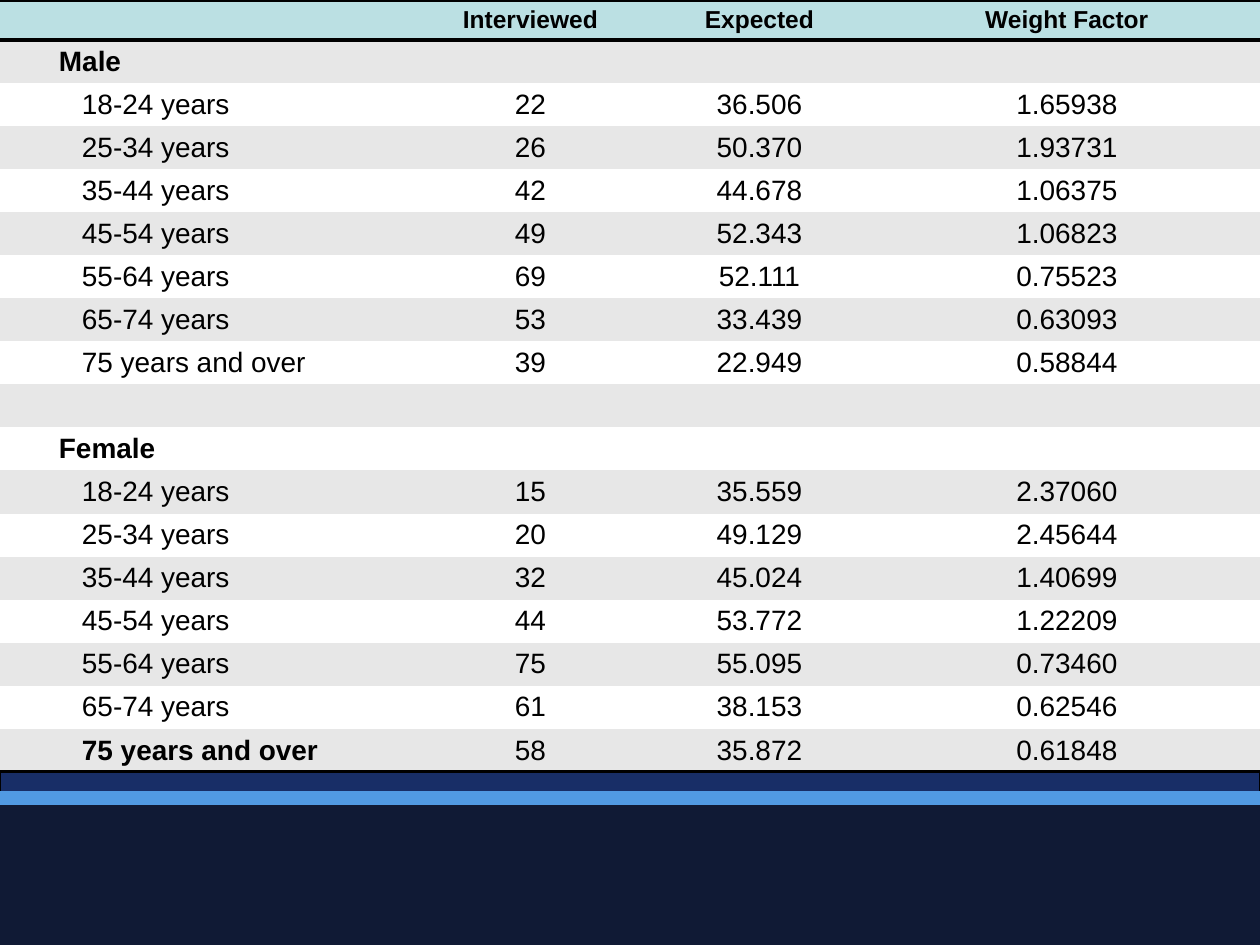
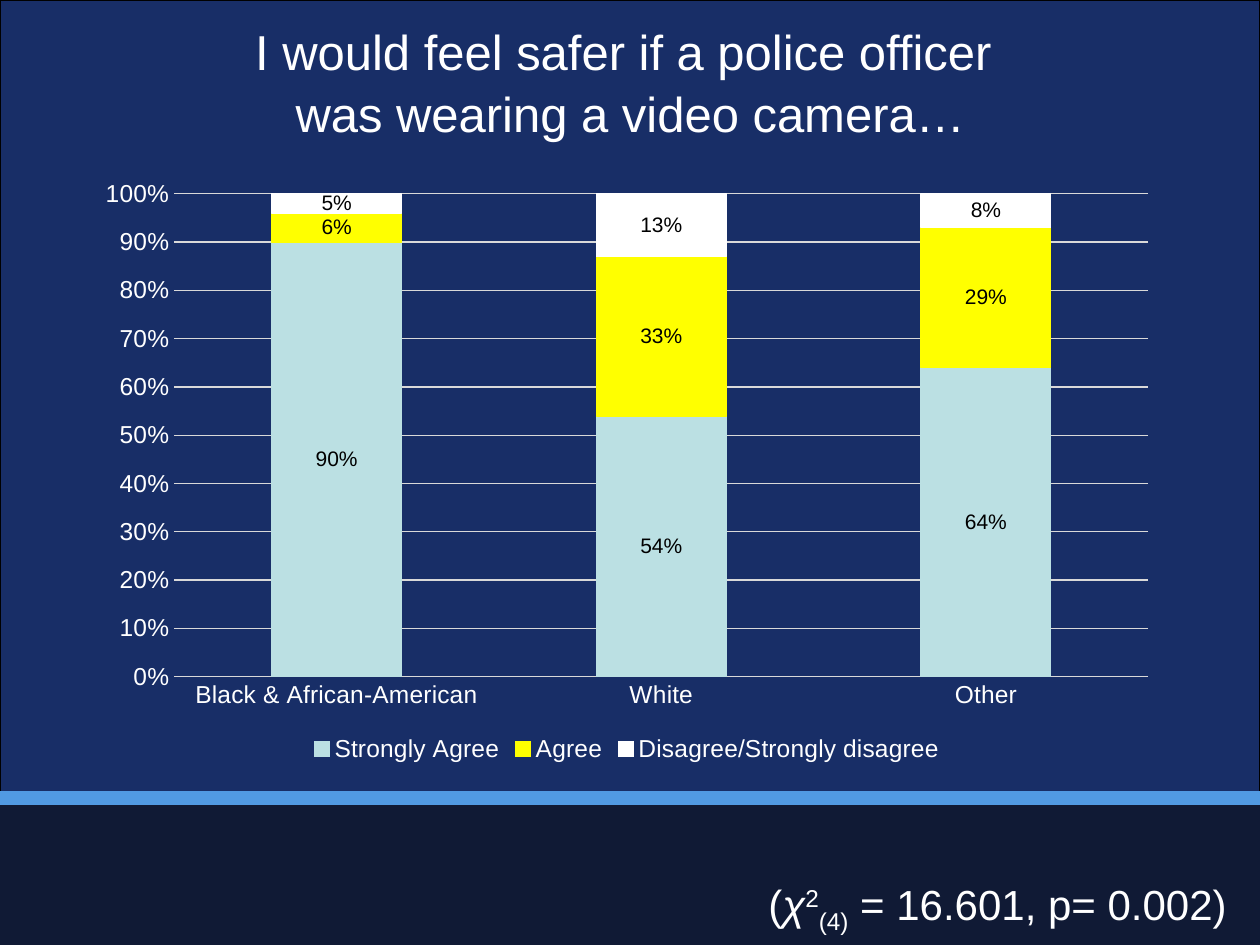
from lxml.etree import SubElement
from pptx import Presentation
from pptx.chart.data import CategoryChartData
from pptx.dml.color import RGBColor
from pptx.enum.chart import XL_CHART_TYPE, XL_LEGEND_POSITION, XL_TICK_MARK
from pptx.enum.shapes import MSO_CONNECTOR, MSO_SHAPE
from pptx.enum.text import MSO_ANCHOR, MSO_AUTO_SIZE, PP_ALIGN
from pptx.oxml.ns import qn
from pptx.util import Pt

EMU_PER_PX = 914400 // 126
WIDTH, HEIGHT = 1260, 945
BAND_TOP = 798
FONT = "Arial"
COLORS = {
    "navy": "182E67", "midnight": "101A35", "sky": "519AE3",
    "pale": "BBE0E3", "yellow": "FFFF00", "white": "FFFFFF",
    "black": "000000", "stripe": "E7E7E7", "grid": "D9D9D9",
}
TITLE_ONLY, BLANK = 5, 6
NO_TABLE_STYLE = "{2D5ABB26-0587-4C30-8999-92F81FD0307C}"

AGES = ["18-24 years", "25-34 years", "35-44 years", "45-54 years",
        "55-64 years", "65-74 years", "75 years and over"]
MALE = [
    ("22", "36.506", "1.65938"), ("26", "50.370", "1.93731"),
    ("42", "44.678", "1.06375"), ("49", "52.343", "1.06823"),
    ("69", "52.111", "0.75523"), ("53", "33.439", "0.63093"),
    ("39", "22.949", "0.58844"),
]
FEMALE = [
    ("15", "35.559", "2.37060"), ("20", "49.129", "2.45644"),
    ("32", "45.024", "1.40699"), ("44", "53.772", "1.22209"),
    ("75", "55.095", "0.73460"), ("61", "38.153", "0.62546"),
    ("58", "35.872", "0.61848"),
]
RACES = ["Black & African-American", "White", "Other"]
ANSWERS = [
    ("Strongly Agree", (0.9, 0.54, 0.64), "pale"),
    ("Agree", (0.06, 0.33, 0.29), "yellow"),
    ("Disagree/Strongly disagree", (0.05, 0.13, 0.08), "white"),
]


def px(length):
    return length * EMU_PER_PX


def color(name):
    return RGBColor.from_string(COLORS[name])


class Deck:
    """Holds the shared style and the slide being built."""

    def __init__(self):
        self.presentation = Presentation()
        self.presentation.slide_width = px(WIDTH)
        self.presentation.slide_height = px(HEIGHT)
        self.slide = None

    def new_slide(self, layout):
        layouts = self.presentation.slide_layouts
        self.slide = self.presentation.slides.add_slide(layouts[layout])

    def style_font(self, font, size, name="white", bold=False):
        font.name = FONT
        font.size = Pt(size)
        font.bold = bold
        font.color.rgb = color(name)

    def rectangle(self, left, top, width, height, fill, line=None):
        shape = self.slide.shapes.add_shape(
            MSO_SHAPE.RECTANGLE, px(left), px(top), px(width), px(height))
        shape.shadow.inherit = False
        shape.fill.solid()
        shape.fill.fore_color.rgb = color(fill)
        if line:
            shape.line.color.rgb = color(line)
            shape.line.width = Pt(0.75)
        else:
            shape.line.fill.background()
        return shape

    def horizontal_line(self, top, name, weight):
        connector = self.slide.shapes.add_connector(
            MSO_CONNECTOR.STRAIGHT, 0, px(top), px(WIDTH), px(top))
        connector.line.color.rgb = color(name)
        connector.line.width = Pt(weight)
        SubElement(connector.element.spPr, qn("a:effectLst"))
        return connector

    def master_background(self):
        """Draw the bands, then move them behind everything on the master."""
        parts = [
            self.rectangle(0, 0, WIDTH, BAND_TOP, "navy", "black"),
            self.rectangle(0, BAND_TOP, WIDTH, HEIGHT - BAND_TOP, "midnight"),
            self.horizontal_line(BAND_TOP, "sky", 8),
        ]
        master_tree = self.presentation.slide_master.shapes.element
        for index, part in enumerate(parts):
            part.element.xpath("./*/p:cNvPr")[0].set("id", str(101 + index))
            master_tree.insert(2 + index, part.element)

    def title(self, text, left, top, width, height):
        shape = self.slide.shapes.title
        shape.left, shape.top = px(left), px(top)
        shape.width, shape.height = px(width), px(height)
        frame = shape.text_frame
        frame.text = text
        frame.word_wrap = True
        frame.auto_size = MSO_AUTO_SIZE.NONE
        frame.vertical_anchor = MSO_ANCHOR.TOP
        frame.margin_top = px(8)
        paragraph = frame.paragraphs[0]
        paragraph.alignment = PP_ALIGN.CENTER
        paragraph.line_spacing = 1.06
        self.style_font(paragraph.font, 28)

    def statistic(self, parts, left, top, width, height):
        """One line of (text, baseline shift in %, italic) parts."""
        box = self.slide.shapes.add_textbox(
            px(left), px(top), px(width), px(height))
        box.text_frame.word_wrap = True
        paragraph = box.text_frame.paragraphs[0]
        self.style_font(paragraph.font, 24)
        for text, shift, italic in parts:
            run = paragraph.add_run()
            run.text = text
            if italic:
                run.font.italic = True
            if shift:
                run._r.get_or_add_rPr().set("baseline", str(shift * 1000))

    def cell(self, cell, text, fill, size=16, bold=False, indent=None, borders=()):
        """Centred cell, or left-aligned at the indent when one is given."""
        properties = cell._tc.get_or_add_tcPr()
        for side in borders:
            line = SubElement(properties, qn(f"a:ln{side}"), w=str(Pt(2)))
            solid = SubElement(line, qn("a:solidFill"))
            SubElement(solid, qn("a:srgbClr"), val=COLORS["black"])
        cell.fill.solid()
        cell.fill.fore_color.rgb = color(fill)
        centred = indent is None
        cell.margin_left = px(1 if centred else indent)
        cell.margin_right = px(1)
        cell.margin_top = cell.margin_bottom = px(6 if text and not centred else 0)
        cell.vertical_anchor = MSO_ANCHOR.MIDDLE
        cell.text = text
        paragraph = cell.text_frame.paragraphs[0]
        paragraph.alignment = PP_ALIGN.CENTER if centred else PP_ALIGN.LEFT
        self.style_font(paragraph.font, size, "black", bold)

    def table(self, header, rows, widths, header_height, row_height):
        """Rows are (label, indent, bold label, values)."""
        frame = self.slide.shapes.add_table(
            len(rows) + 1, len(widths), 0, 0, px(sum(widths)),
            px(header_height + row_height * len(rows)))
        table = frame.table
        table._tbl.tblPr.find(qn("a:tableStyleId")).text = NO_TABLE_STYLE
        table.first_row = table.horz_banding = False
        for column, width in zip(table.columns, widths):
            column.width = px(width)
        for index, row in enumerate(table.rows):
            row.height = px(row_height if index else header_height)
        for column, text in enumerate(header):
            self.cell(table.cell(0, column), text, "pale", 14, True, borders="TB")
        for index, (label, indent, bold, values) in enumerate(rows, 1):
            fill = "stripe" if index % 2 else "white"
            borders = "B" if index == len(rows) else ""
            self.cell(table.cell(index, 0), label, fill, bold=bold,
                      indent=indent, borders=borders)
            for column, value in enumerate(values, 1):
                self.cell(table.cell(index, column), value, fill, borders=borders)

    def stacked_chart(self, categories, answers, left, top, width, height):
        data = CategoryChartData(number_format="0%")
        data.categories = categories
        for name, values, _ in answers:
            data.add_series(name, values)
        chart = self.slide.shapes.add_chart(
            XL_CHART_TYPE.COLUMN_STACKED, px(left), px(top),
            px(width), px(height), data).chart
        chart.has_title = False
        self.style_font(chart.font, 10)

        # Bars and their labels
        plot = chart.plots[0]
        plot.gap_width, plot.overlap = 150, 100
        plot.vary_by_categories = False
        for series, (_, _, name) in zip(plot.series, answers):
            series.format.fill.solid()
            series.format.fill.fore_color.rgb = color(name)
            series.format.line.color.rgb = color(name)
            series.format.line.width = Pt(0.75)
            labels = series.data_labels
            labels.show_value = True
            labels.number_format = "0%"
            labels.number_format_is_linked = False
            self.style_font(labels.font, 12, "black")

        # Axes
        for axis in (chart.category_axis, chart.value_axis):
            axis.major_tick_mark = axis.minor_tick_mark = XL_TICK_MARK.NONE
            self.style_font(axis.tick_labels.font, 14)
        value_axis = chart.value_axis
        value_axis.minimum_scale, value_axis.maximum_scale = 0, 1
        value_axis.major_unit = 0.1
        value_axis.tick_labels.number_format = "0%"
        value_axis.tick_labels.number_format_is_linked = False
        value_axis.format.line.fill.background()
        for line in (chart.category_axis.format.line,
                     value_axis.major_gridlines.format.line):
            line.color.rgb = color("grid")
            line.width = Pt(0.75)

        # Legend
        chart.has_legend = True
        chart.legend.position = XL_LEGEND_POSITION.BOTTOM
        chart.legend.include_in_layout = False
        self.style_font(chart.legend.font, 14)


def group_rows(heading, values, bold_last=False):
    rows = [(heading, 59, True, ("", "", ""))]
    for age, row_values in zip(AGES, values):
        rows.append((age, 82, bold_last and age == AGES[-1], row_values))
    return rows


def main():
    deck = Deck()

    # Weighting table
    deck.new_slide(BLANK)
    deck.master_background()
    spacer = [("", 59, False, ("", "", ""))]
    deck.table(
        ["", "Interviewed", "Expected", "Weight Factor"],
        group_rows("Male", MALE) + spacer + group_rows("Female", FEMALE, True),
        [416, 229, 229, 386], 40, 43)

    # Video camera survey chart
    deck.new_slide(TITLE_ONLY)
    deck.title("I would feel safer if a police officer \v"
               "was wearing a video camera…", 63, 10, 1134, 120)
    deck.stacked_chart(RACES, ANSWERS, 84, 168, 1086, 600)
    deck.statistic(
        [("(", 0, False), ("χ", 0, True), ("2", 30, False),
         ("(4)", -25, False), (" = 16.601, p= 0.002)", 0, False)],
        756, 872, 518, 63)

    deck.presentation.save("out.pptx")


if __name__ == "__main__":
    main()
